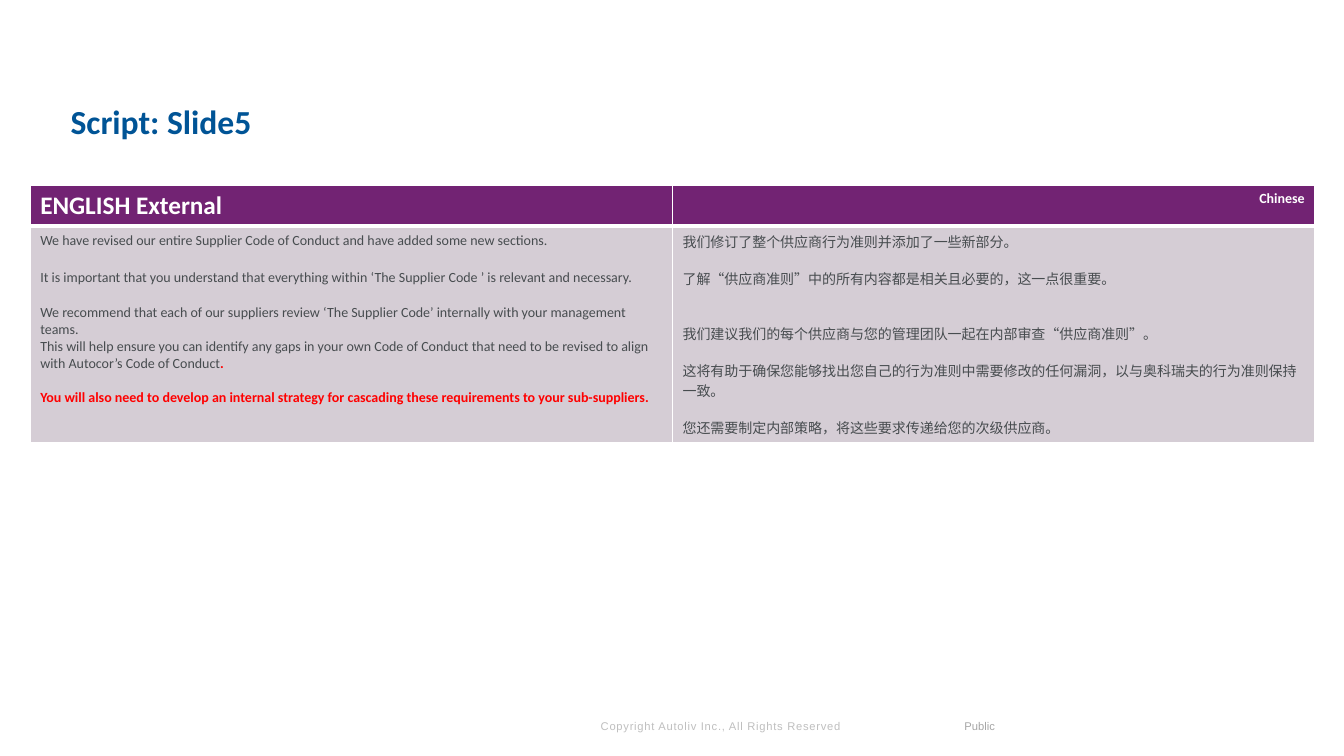
"""Build the bilingual script slide for the supplier code of conduct."""
from lxml import etree
from pptx import Presentation, util as u
from pptx.dml.color import RGBColor
from pptx.enum import shapes, text
from pptx.oxml.ns import qn

COLORS = {
    "title": "005496", "header": "722373", "body": "D5CDD5", "ink": "474C4F",
    "alert": "FF0000", "white": "FFFFFF", "footer": "BFBFBF", "label": "A6A6A6",
}
SLIDE_SIZE = (13.33, 7.5)
BOXES = {
    "title": (4.5, 4.4, 91.67, 14.4),
    "table": (2.25, 24.53, 95.57, 33.86),
    "copyright": (43.96, 94.53, 20.41, 3.07),
    "public": (66.84, 93.73, 7.2, 3.2),
}
ROW_SHARES = (5.33, 28.53)
TITLE = "Script: Slide5"
COPYRIGHT = "Copyright Autoliv Inc., All Rights Reserved"
LABEL = "Public"

INK = {"color": "ink"}
ALERT = {"color": "alert", "bold": True}
HEADERS = [
    ("ENGLISH External", {"size": 18}),
    ("Chinese", {"align": text.PP_ALIGN.RIGHT}),
]
ENGLISH = [
    (0, 1.07, [("We have revised our entire Supplier Code of Conduct and have added some new sections.", INK)]),
    (13, 1.07, [("It is important that you understand that everything within ‘The Supplier Code ’ is relevant and necessary.", INK)]),
    (13, 1, [("We recommend that each of our suppliers review ‘The Supplier Code’ internally with your management teams.", INK)]),
    (0, 1, [("This will help ensure you can identify any gaps in your own Code of Conduct that need to be revised to align with Autocor’s Code of Conduct", INK),
            (".", ALERT)]),
    (12.2, 1, [("You will also need to develop an internal strategy for cascading these requirements to your sub-suppliers.", ALERT)]),
]
CHINESE = [
    (0, 1, [("我们修订了整个供应商行为准则并添加了一些新部分。", INK)]),
    (12.2, 1, [("了解“供应商准则”中的所有内容都是相关且必要的，这一点很重要。", INK)]),
    (24.4, 1, [("我们建议我们的每个供应商与您的管理团队一起在内部审查“供应商准则”。", INK)]),
    (12.2, 1, [("这将有助于确保您能够找出您自己的行为准则中需要修改的任何漏洞，以与奥科瑞夫的行为准则保持一致。", INK)]),
    (12.2, 1, [("您还需要制定内部策略，将这些要求传递给您的次级供应商。", INK)]),
]


def rgb(name):
    return RGBColor.from_string(COLORS[name])


def place(name):
    return [u.Inches(share * SLIDE_SIZE[index % 2] / 100)
            for index, share in enumerate(BOXES[name])]


def write(paragraph, words, size=10, color="ink", bold=False, font="Calibri",
          align=text.PP_ALIGN.LEFT, spacing=None):
    paragraph.alignment = align
    run = paragraph.add_run()
    run.text = words
    run.font.name, run.font.size, run.font.bold = font, u.Pt(size), bold
    run.font.color.rgb = rgb(color)
    if spacing:
        run.font._element.set("spc", str(int(spacing * 100)))


def set_frame(frame, margins, wrap=True):
    frame.word_wrap = wrap
    frame.auto_size = text.MSO_AUTO_SIZE.NONE
    frame.vertical_anchor = text.MSO_ANCHOR.BOTTOM
    (frame.margin_left, frame.margin_top,
     frame.margin_right, frame.margin_bottom) = map(u.Inches, margins)


def format_cell(cell, fill, bottom_width):
    properties = cell._tc.get_or_add_tcPr()
    for side, width in zip("LRTB", (1, 1, 1, bottom_width)):
        line = etree.SubElement(properties, qn(f"a:ln{side}"), w=str(u.Pt(width)))
        solid = etree.SubElement(line, qn("a:solidFill"))
        etree.SubElement(solid, qn("a:srgbClr"), val=COLORS["white"])
    cell.fill.solid()
    cell.fill.fore_color.rgb = rgb(fill)


def add_footer(slide):
    copyright_box = slide.shapes.add_textbox(*place("copyright"))
    set_frame(copyright_box.text_frame, (0.1, 0.05, 0.1, 0.05))
    write(copyright_box.text_frame.paragraphs[0], COPYRIGHT, size=8, color="footer",
          font="Arial", spacing=0.5)
    label = slide.shapes.add_shape(shapes.MSO_SHAPE.RECTANGLE, *place("public"))
    label.shadow.inherit = False
    label.fill.solid()
    label.fill.fore_color.rgb = rgb("white")
    color = label._element.spPr.find(qn("a:solidFill"))[0]
    etree.SubElement(color, qn("a:alpha"), val="50000")
    label.line.fill.background()
    set_frame(label.text_frame, (0, 0, 0, 0))
    write(label.text_frame.paragraphs[0], LABEL, size=8, color="label",
          font="Arial", align=text.PP_ALIGN.RIGHT)


def add_script_table(slide):
    table = slide.shapes.add_table(2, 2, *place("table")).table
    for row, share in zip(table.rows, ROW_SHARES):
        row.height = u.Inches(share * SLIDE_SIZE[1] / 100)
    for column, (words, style) in enumerate(HEADERS):
        cell = table.cell(0, column)
        format_cell(cell, "header", 3)
        write(cell.text_frame.paragraphs[0], words, color="white", bold=True, **style)
    for column, content in enumerate((ENGLISH, CHINESE)):
        cell = table.cell(1, column)
        format_cell(cell, "body", 1)
        for index, (before, line_spacing, runs) in enumerate(content):
            frame = cell.text_frame
            paragraph = frame.add_paragraph() if index else frame.paragraphs[0]
            paragraph.line_spacing = line_spacing
            if before:
                paragraph.space_before = u.Pt(before)
            for words, style in runs:
                write(paragraph, words, **style)


def main():
    presentation = Presentation()
    presentation.slide_width, presentation.slide_height = map(u.Inches, SLIDE_SIZE)
    slide = presentation.slides.add_slide(presentation.slide_layouts[5])
    title = slide.shapes.title
    title.left, title.top, title.width, title.height = place("title")
    set_frame(title.text_frame, (0.1, 0, 0, 0))
    title.text_frame.paragraphs[0].line_spacing = 0.9
    write(title.text_frame.paragraphs[0], TITLE, size=24, color="title", bold=True)
    add_footer(slide)
    add_script_table(slide)
    presentation.save("out.pptx")


if __name__ == "__main__":
    main()
